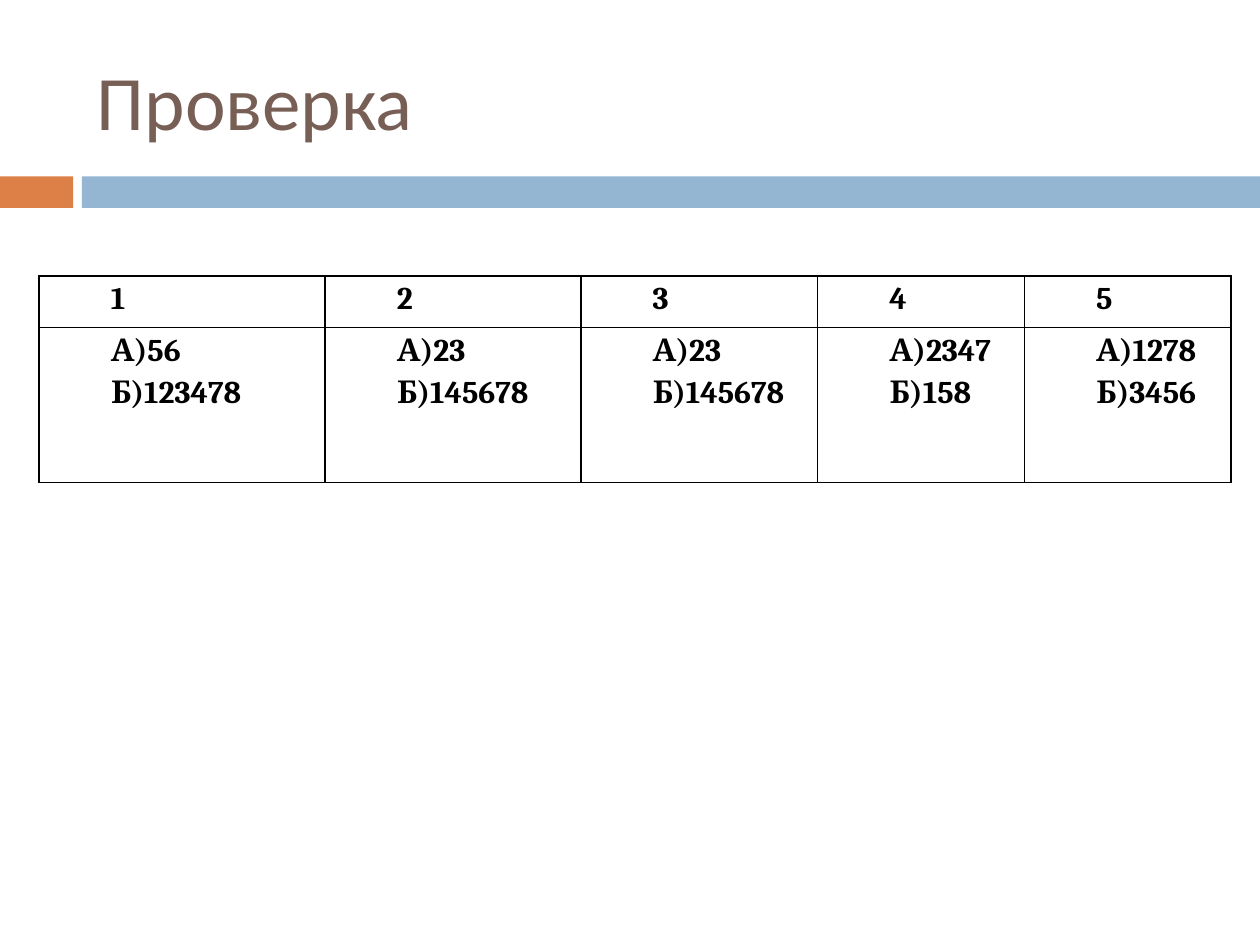
from lxml import etree
from pptx import Presentation
from pptx.dml.color import RGBColor
from pptx.enum.shapes import MSO_SHAPE
from pptx.enum.text import MSO_ANCHOR
from pptx.oxml.ns import qn
from pptx.util import Inches, Pt

RECTANGLE = MSO_SHAPE.RECTANGLE
MIDDLE = MSO_ANCHOR.MIDDLE

ORANGE = RGBColor(0xDD, 0x80, 0x47)
BLUE = RGBColor(0x94, 0xB6, 0xD2)
BROWN = RGBColor(0x77, 0x5F, 0x55)
BLACK = RGBColor(0, 0, 0)
WHITE = RGBColor(0xFF, 0xFF, 0xFF)

SLIDE_WIDTH, SLIDE_HEIGHT = 10, 7.5
BAND_TOP, BAND_HEIGHT = 1.4, 0.25
BLUE_LEFT = 0.65
COLUMN_WIDTHS = [2.27, 2.03, 1.88, 1.64, 1.64]
ROW_HEIGHTS = [0.41, 1.23]
ANSWERS = [
    ("1", "А)56", "Б)123478"),
    ("2", "А)23", "Б)145678"),
    ("3", "А)23", "Б)145678"),
    ("4", "А)2347", "Б)158"),
    ("5", "А)1278", "Б)3456"),
]


def add_run(paragraph, text, font_name, size, color, bold=False):
    run = paragraph.add_run()
    run.text = text
    run.font.name = font_name
    run.font.size = Pt(size)
    run.font.bold = bold
    run.font.color.rgb = color


def add_band(slide, left, width, color):
    band = slide.shapes.add_shape(
        RECTANGLE, Inches(left), Inches(BAND_TOP), Inches(width), Inches(BAND_HEIGHT)
    )
    band.shadow.inherit = False
    band.fill.solid()
    band.fill.fore_color.rgb = color
    band.line.fill.background()


def add_title(slide, text):
    title = slide.shapes.add_textbox(
        Inches(0.67), Inches(0.25), Inches(8.92), Inches(1.08)
    )
    frame = title.text_frame
    frame.word_wrap = True
    frame.vertical_anchor = MIDDLE
    add_run(frame.paragraphs[0], text, "Calibri", 44, BROWN)


def add_borders(cell):
    properties = cell._tc.get_or_add_tcPr()
    for side in ("lnL", "lnR", "lnT", "lnB"):
        border = etree.SubElement(properties, qn(f"a:{side}"), w=str(Pt(1)))
        fill = etree.SubElement(border, qn("a:solidFill"))
        etree.SubElement(fill, qn("a:srgbClr"), val=str(BLACK))


def fill_cell(cell, lines):
    add_borders(cell)
    cell.fill.solid()
    cell.fill.fore_color.rgb = WHITE
    cell.margin_left = cell.margin_right = Inches(0.07)
    cell.margin_top = cell.margin_bottom = 0
    frame = cell.text_frame
    for index, line in enumerate(lines):
        paragraph = frame.add_paragraph() if index else frame.paragraphs[0]
        paragraph.line_spacing = 1.15
        paragraph._p.get_or_add_pPr().set("marL", str(Inches(0.5)))
        add_run(paragraph, line, "Cambria", 18, BLACK, bold=True)


def add_answer_table(slide):
    table = slide.shapes.add_table(
        len(ROW_HEIGHTS), len(COLUMN_WIDTHS), Inches(0.31), Inches(2.19),
        Inches(sum(COLUMN_WIDTHS)), Inches(sum(ROW_HEIGHTS)),
    ).table
    table.first_row = table.horz_banding = False
    for row, height in zip(table.rows, ROW_HEIGHTS):
        row.height = Inches(height)
    for column, width in zip(table.columns, COLUMN_WIDTHS):
        column.width = Inches(width)
    for index, (number, *answers) in enumerate(ANSWERS):
        fill_cell(table.cell(0, index), [number])
        fill_cell(table.cell(1, index), answers)


def main():
    presentation = Presentation()
    presentation.slide_width = Inches(SLIDE_WIDTH)
    presentation.slide_height = Inches(SLIDE_HEIGHT)
    slide = presentation.slides.add_slide(presentation.slide_layouts[6])
    add_band(slide, 0, 0.58, ORANGE)
    add_band(slide, BLUE_LEFT, SLIDE_WIDTH - BLUE_LEFT, BLUE)
    add_title(slide, "Проверка")
    add_answer_table(slide)
    presentation.save("out.pptx")


if __name__ == "__main__":
    main()
